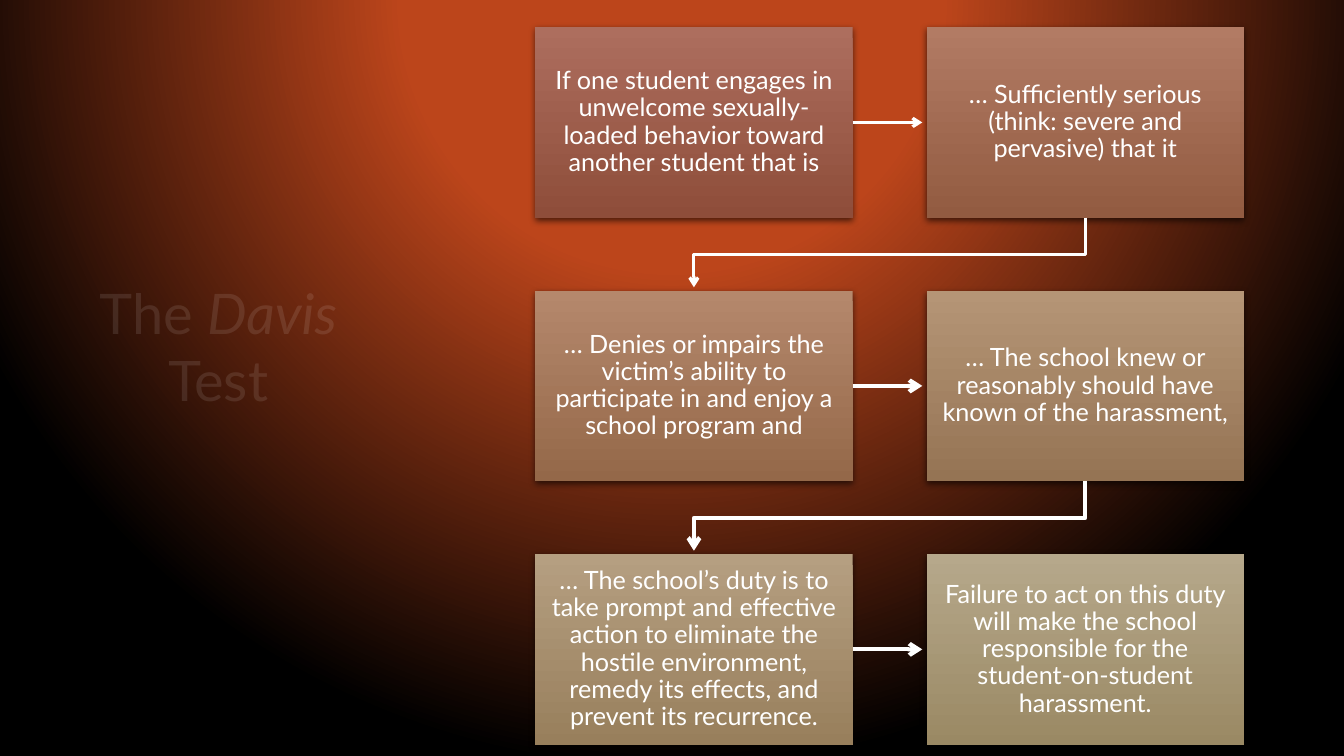
"""Build a slide that charts the steps of the Davis test."""
from dataclasses import dataclass

from lxml.etree import SubElement
from pptx import Presentation
from pptx.dml.color import RGBColor
from pptx.enum.shapes import MSO_CONNECTOR, MSO_SHAPE
from pptx.enum.text import MSO_ANCHOR, MSO_AUTO_SIZE, PP_ALIGN
from pptx.oxml.ns import qn
from pptx.util import Pt


@dataclass(frozen=True)
class Theme:
    font: str = "Lato"
    title_size: float = 40
    body_size: float = 18
    text: str = "FFFFFF"
    line: str = "FFFFFF"
    shadow: str = "000000"
    glow: str = "BC451B"
    dark: str = "000000"
    title_alpha: int = 10
    steps: tuple = (("AD6E5E", "8E4D3A"), ("B27B64", "925B41"),
                    ("B5886C", "946849"), ("B59576", "957454"),
                    ("B59F81", "987F5C"), ("B6A88B", "9A8964"))


STEPS = (
    "If one student engages in unwelcome sexually-loaded behavior toward another student that is",
    "… Sufficiently serious (think: severe and pervasive) that it",
    "… Denies or impairs the victim’s ability to participate in and enjoy a school program and",
    "… The school knew or reasonably should have known of the harassment,",
    "… The school’s duty is to take prompt and effective action to eliminate the hostile "
    "environment, remedy its effects, and prevent its recurrence.",
    "Failure to act on this duty will make the school responsible for the "
    "student-on-student harassment.",
)
LEFT, TOP = 382.3, 19.4
BOX_W, BOX_H = 226.8, 136.1
COL_PITCH, ROW_PITCH = 279.5, 188.2
ARROW, BEND = 49.7, 26.3


class Deck:
    """Hold the theme and the current slide, and draw its elements."""

    def __init__(self, prs, theme):
        self.theme = theme
        self.slide = prs.slides.add_slide(prs.slide_layouts[5])

    def gradient(self, fill, colors, start=0):
        fill.gradient()
        for stop, color, position in zip(fill.gradient_stops, colors, (start, 1)):
            stop.color.rgb = RGBColor.from_string(color)
            stop.position = position

    def background(self):
        self.gradient(self.slide.background.fill, (self.theme.glow, self.theme.dark), 0.35)
        grad = next(self.slide.element.iter(qn("a:gradFill")))
        grad.remove(grad.find(qn("a:lin")))
        ring = SubElement(grad, qn("a:path"), path="circle")
        SubElement(ring, qn("a:fillToRect"), l="50000", t="-80000", r="50000", b="180000")

    def style_run(self, r, size):
        r.font.name = self.theme.font
        r.font.size = Pt(size)
        r.font.color.rgb = RGBColor.from_string(self.theme.text)

    def color_xml(self, parent, color, alpha):
        clr = SubElement(parent, qn("a:srgbClr"), val=color)
        SubElement(clr, qn("a:alpha"), val=str(alpha * 1000))

    def fade(self, r):
        r_pr = r.font.fill and r._r.rPr
        fill = r_pr.find(qn("a:solidFill"))
        fill.clear()
        self.color_xml(fill, self.theme.text, self.theme.title_alpha)
        ln = SubElement(r_pr, qn("a:ln"), w=str(Pt(0.75)))
        self.color_xml(SubElement(ln, qn("a:solidFill")), self.theme.text,
                       self.theme.title_alpha)
        r_pr.insert(0, ln)

    def title(self, parts, x, y, w, h):
        sp = self.slide.shapes.title
        sp.left, sp.top, sp.width, sp.height = Pt(x), Pt(y), Pt(w), Pt(h)
        tf = sp.text_frame
        tf.auto_size = MSO_AUTO_SIZE.NONE
        tf.vertical_anchor = MSO_ANCHOR.MIDDLE
        p = tf.paragraphs[0]
        p.alignment = PP_ALIGN.CENTER
        for text, italic in parts:
            r = p.add_run()
            r.text = text
            self.style_run(r, self.theme.title_size)
            r.font.italic = italic
            self.fade(r)

    def box(self, text, colors, x, y):
        sp = self.slide.shapes.add_shape(MSO_SHAPE.RECTANGLE, Pt(x), Pt(y), Pt(BOX_W), Pt(BOX_H))
        self.gradient(sp.fill, colors)
        sp.fill.gradient_angle = 270
        sp.line.fill.background()
        sp.shadow.inherit = False
        effects = sp.element.spPr.find(qn("a:effectLst"))
        shadow = SubElement(effects, qn("a:outerShdw"), blurRad=str(Pt(5)), dist=str(Pt(2)),
                            dir="5400000", algn="ctr", rotWithShape="0")
        self.color_xml(shadow, self.theme.shadow, 60)
        tf = sp.text_frame
        tf.word_wrap = True
        tf.vertical_anchor = MSO_ANCHOR.MIDDLE
        tf.margin_left = tf.margin_right = Pt(10.8)
        tf.margin_top = tf.margin_bottom = Pt(11.5)
        tf.text = text
        p = tf.paragraphs[0]
        p.alignment = PP_ALIGN.CENTER
        p.line_spacing = 0.9
        self.style_run(p.runs[0], self.theme.body_size)
        return sp

    def arrow_line(self, sp, width):
        sp.line.color.rgb = RGBColor.from_string(self.theme.line)
        sp.line.width = Pt(width)
        SubElement(sp.element.spPr.find(qn("a:ln")), qn("a:tailEnd"), type="arrow")

    def across(self, box, width):
        x, y = box.left + box.width, box.top + box.height // 2
        cx = self.slide.shapes.add_connector(MSO_CONNECTOR.STRAIGHT, x, y, x + Pt(ARROW), y)
        cx.begin_connect(box, 3)
        self.arrow_line(cx, width)
        SubElement(cx.element.spPr, qn("a:effectLst"))

    def down(self, box, width):
        x, y = box.left + box.width // 2, box.top + box.height
        x_end = x - Pt(COL_PITCH)
        fb = self.slide.shapes.build_freeform(x, y)
        fb.add_line_segments([(x, y + Pt(BEND)), (x_end, y + Pt(BEND)),
                              (x_end, y + Pt(ARROW))], close=False)
        sp = fb.convert_to_shape()
        sp.fill.background()
        sp.shadow.inherit = False
        self.arrow_line(sp, width)


def main():
    prs = Presentation()
    prs.slide_width, prs.slide_height = Pt(960), Pt(540)
    theme = Theme()
    deck = Deck(prs, theme)
    deck.background()
    deck.title((("The ", False), ("Davis ", True), ("Test", False)), 54, 50.4, 203.8, 393.1)
    for i, (text, colors) in enumerate(zip(STEPS, theme.steps)):
        row, col = divmod(i, 2)
        box = deck.box(text, colors, LEFT + col * COL_PITCH, TOP + row * ROW_PITCH)
        width = 2.25 if row == 0 else 3
        if col == 0:
            deck.across(box, width)
        elif i < len(STEPS) - 1:
            deck.down(box, width)
    prs.save("out.pptx")


if __name__ == "__main__":
    main()
